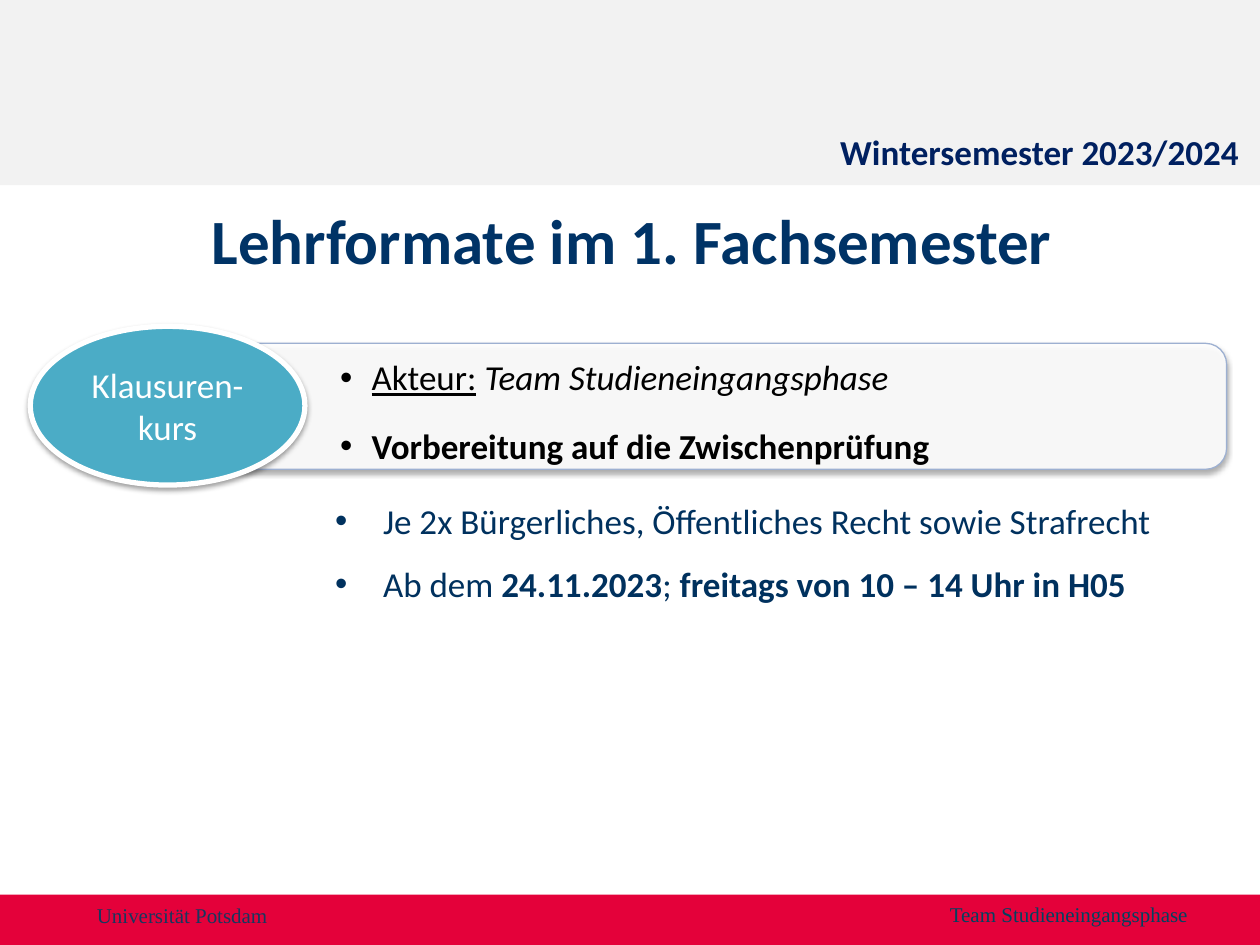
from lxml import etree
from pptx import Presentation
from pptx import util as u
from pptx.dml.color import RGBColor
from pptx.enum import shapes, text
from pptx.oxml.ns import qn

SANS = {"name": "Calibri", "size": u.Pt(20)}
SERIF = {"name": "Times New Roman", "size": u.Pt(12)}
BOLD = {"bold": True}


def color(value):
    return RGBColor.from_string(value)


def place(box, left, top, width, height):
    box.left, box.top, box.width, box.height = map(
        u.Inches, (left, top, width, height))


def set_frame(box, anchor=text.MSO_ANCHOR.TOP, wrap=True, insets=(0.1, 0.05, 0.1, 0.05)):
    frame = box.text_frame
    frame.auto_size = text.MSO_AUTO_SIZE.NONE
    frame.word_wrap = wrap
    frame.vertical_anchor = anchor
    sides = ("margin_left", "margin_top", "margin_right", "margin_bottom")
    for side, inset in zip(sides, insets):
        setattr(frame, side, u.Inches(inset))
    return frame


def write(para, spans, style, hue):
    """Fill a paragraph with (wording, extra format) spans."""
    for wording, extra in spans:
        span = para.add_run()
        span.text = wording
        for name, value in {**style, **extra}.items():
            setattr(span.font, name, value)
        span.font.color.rgb = color(hue)


def add_label(page, at, wording, style, hue, **frame_options):
    box = page.shapes.add_textbox(*map(u.Inches, at))
    frame = set_frame(box, **frame_options)
    write(frame.paragraphs[0], [(wording, {})], style, hue)


def add_bullet(para, margin, hanging):
    props = para._p.get_or_add_pPr()
    props.set("marL", str(u.Inches(margin)))
    props.set("indent", str(-u.Inches(hanging)))
    etree.SubElement(props, qn("a:buFont"), typeface="Arial")
    etree.SubElement(props, qn("a:buChar"), char="•")


def fill_list(frame, items, hue, margin, hanging, after):
    for number, spans in enumerate(items):
        para = frame.add_paragraph() if number else frame.paragraphs[0]
        add_bullet(para, margin, hanging)
        para.line_spacing = 1.5
        para.space_before = u.Pt(0)
        para.space_after = u.Pt(after)
        write(para, spans, SANS, hue)


def add_panel(page, kind, at, fill, line=None, weight=0):
    panel = page.shapes.add_shape(kind, *map(u.Inches, at))
    panel.shadow.inherit = False
    panel.fill.solid()
    panel.fill.fore_color.rgb = color(fill)
    if line:
        panel.line.color.rgb = color(line)
        panel.line.width = u.Pt(weight)
    else:
        panel.line.fill.background()
    return panel


def add_alpha(parent, percent):
    etree.SubElement(parent, qn("a:alpha"), val=str(percent * 1000))


def add_shadow(panel, percent, blur, distance):
    effects = panel._element.spPr.find(qn("a:effectLst"))
    shadow = etree.SubElement(
        effects, qn("a:outerShdw"), blurRad=str(u.Pt(blur)),
        dist=str(u.Pt(distance)), dir="5400000", rotWithShape="0")
    add_alpha(etree.SubElement(shadow, qn("a:srgbClr"), val="000000"), percent)


def main():
    deck = Presentation()
    deck.slide_width, deck.slide_height = u.Inches(10), u.Inches(7.5)
    page = deck.slides.add_slide(deck.slide_layouts[1])
    kinds = shapes.MSO_SHAPE
    middle = text.MSO_ANCHOR.MIDDLE

    # Header and footer bands
    add_panel(page, kinds.RECTANGLE, (0, 0, 10, 1.47), "F2F2F2")
    add_panel(page, kinds.RECTANGLE, (0, 7.1, 10, 0.4), "E4013A")
    add_label(page, (0.67, 7.06, 4.41, 0.4), "Universität Potsdam",
              SERIF, "17375E", anchor=middle)

    # Course panel, turned so that its rounded end points right
    panel = add_panel(page, kinds.ROUND_2_SAME_RECTANGLE,
                      (4.78, -1.23, 1, 8.91), "FFFFFF", "9DB0D1", 0.75)
    panel.rotation = 90
    add_alpha(panel._element.spPr.find(qn("a:solidFill"))[0], 90)
    add_shadow(panel, 35, 3.1, 1.8)
    details = page.shapes.add_textbox(*map(u.Inches, (1.54, 2.73, 8.2, 0.9)))
    frame = set_frame(details, middle, insets=(0.16, 0.01, 0.01, 0.01))
    fill_list(frame, [
        [("Akteur:", {"underline": True}), (" ", {}),
         ("Team Studieneingangsphase", {"italic": True})],
        [("Vorbereitung auf die Zwischenprüfung", BOLD)],
    ], "000000", 1.25, 0.25, 3)

    # Course name
    oval = add_panel(page, kinds.OVAL, (0.24, 2.59, 2.18, 1.26),
                     "4BACC6", "FFFFFF", 3)
    add_shadow(oval, 38, 3.1, 1.6)
    para = set_frame(oval, middle).paragraphs[0]
    para.alignment = text.PP_ALIGN.CENTER
    write(para, [("Klausuren-kurs", {})], SANS, "FFFFFF")

    # Title
    title = page.shapes.title
    place(title, 0.21, 1.55, 9.61, 0.71)
    para = set_frame(title).paragraphs[0]
    para.alignment = text.PP_ALIGN.CENTER
    write(para, [("Lehrformate im 1. Fachsemester", BOLD)],
          {**SANS, "size": u.Pt(36)}, "003366")

    # Dates and subjects
    body = page.placeholders[1]
    place(body, 2.56, 3.75, 7, 1.06)
    fill_list(set_frame(body), [
        [("Je 2x Bürgerliches, Öffentliches Recht sowie Strafrecht", {})],
        [("Ab dem ", {}), ("24.11.2023", BOLD), ("; ", {}),
         ("freitags von 10 – 14 Uhr in H05", BOLD)],
    ], "00315E", 0.38, 0.38, 0)

    # Team and semester
    add_label(page, (7.44, 7.11, 2.12, 0.3), "Team Studieneingangsphase",
              SERIF, "014260", wrap=False)
    add_label(page, (6.57, 0.99, 3.43, 0.44), "Wintersemester 2023/2024",
              {**SANS, **BOLD}, "002060")

    deck.save("out.pptx")


if __name__ == "__main__":
    main()
